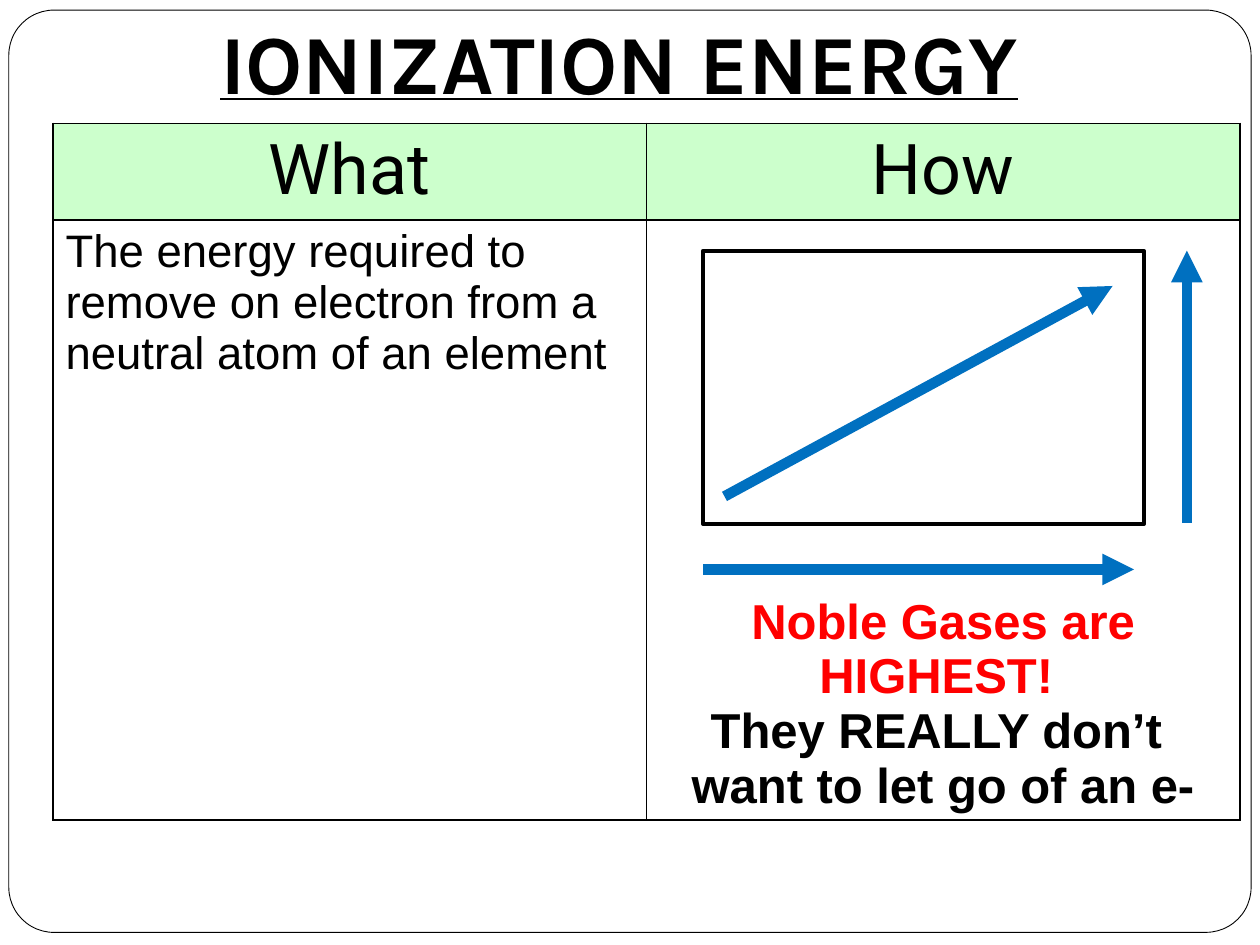
from pptx import Presentation
from pptx.dml.color import RGBColor
from pptx.enum.shapes import MSO_CONNECTOR, MSO_SHAPE
from pptx.enum.text import MSO_ANCHOR, PP_ALIGN
from pptx.oxml import parse_xml
from pptx.oxml.ns import nsdecls
from pptx.util import Inches, Pt

COLORS = {"black": "000000", "white": "FFFFFF", "header": "CCFFCC",
          "arrow": "0070C0", "highlight": "FF0000"}


def color(name):
    return RGBColor.from_string(COLORS[name])


def write(paragraph, text, size=26, font="Arial", fill="black", bold=False,
          underline=False, align=PP_ALIGN.LEFT):
    """Add text to a paragraph; each newline becomes a line break."""
    paragraph.alignment = align
    for index, line in enumerate(text.split("\n")):
        if index:
            paragraph.add_line_break()
        if line:
            run = paragraph.add_run()
            run.text = line
            run.font.size = Pt(size)
            run.font.name = font
            run.font.bold = bold
            run.font.underline = underline
            run.font.color.rgb = color(fill)


presentation = Presentation()
presentation.slide_width = Inches(10)
presentation.slide_height = Inches(7.5)
slide = presentation.slides.add_slide(presentation.slide_layouts[6])

# Rounded frame
frame = slide.shapes.add_shape(MSO_SHAPE.ROUNDED_RECTANGLE, Inches(0.07), Inches(0.08),
                               Inches(9.86), Inches(7.32))
frame.adjustments[0] = 0.049
frame.shadow.inherit = False
frame.fill.solid()
frame.fill.fore_color.rgb = color("white")
frame.line.color.rgb = color("black")
frame.line.width = Pt(0.5)

# Title
title = slide.shapes.add_textbox(Inches(0.33), Inches(0.25), Inches(9.17), Inches(0.73))
title.text_frame.word_wrap = True
title.text_frame.vertical_anchor = MSO_ANCHOR.BOTTOM
title.text_frame.margin_bottom = Inches(0.1)
write(title.text_frame.paragraphs[0], "IONIZATION ENERGY", size=48, font="Karla",
      bold=True, underline=True, align=PP_ALIGN.CENTER)

# Table
table = slide.shapes.add_table(2, 2, Inches(0.42), Inches(0.98),
                               Inches(9.42), Inches(5.51)).table
table.rows[0].height = Inches(0.75)
table.rows[1].height = Inches(4.76)
for cell, fill in zip(table.iter_cells(), ["header", "header", "white", "white"]):
    cell.fill.solid()
    cell.fill.fore_color.rgb = color(fill)
    properties = cell._tc.get_or_add_tcPr()
    for index, side in enumerate(["lnL", "lnR", "lnT", "lnB"]):
        properties.insert(index, parse_xml(
            f'<a:{side} {nsdecls("a")} w="12700"><a:solidFill>'
            f'<a:srgbClr val="{COLORS["black"]}"/></a:solidFill></a:{side}>'))

for column, heading in enumerate(["What", "How"]):
    write(table.cell(0, column).text_frame.paragraphs[0], heading, size=40,
          font="Roboto", align=PP_ALIGN.CENTER)

write(table.cell(1, 0).text_frame.paragraphs[0],
      "The energy required to remove on electron from a neutral atom of an element")

trend_cell = table.cell(1, 1)
trend_cell.vertical_anchor = MSO_ANCHOR.BOTTOM
trend_note = trend_cell.text_frame.paragraphs[0]
for text, fill in [("Noble Gases are HIGHEST! \n", "highlight"),
                   ("They REALLY don’t \nwant to let go of an e-", "black")]:
    write(trend_note, text, size=28, fill=fill, bold=True, align=PP_ALIGN.CENTER)

# Periodic table outline
outline = slide.shapes.add_shape(MSO_SHAPE.RECTANGLE, Inches(5.58), Inches(1.99),
                                 Inches(3.5), Inches(2.17))
outline.shadow.inherit = False
outline.fill.background()
outline.line.color.rgb = color("black")
outline.line.width = Pt(2.25)

# Trend arrows: across, up, diagonal
for points in [(5.58, 4.52, 9, 4.52), (9.42, 4.15, 9.42, 1.99), (5.75, 3.94, 8.83, 2.27)]:
    arrow = slide.shapes.add_connector(MSO_CONNECTOR.STRAIGHT, *map(Inches, points))
    arrow.line.color.rgb = color("arrow")
    arrow.line.width = Pt(6)
    arrow.line._get_or_add_ln().append(
        parse_xml(f'<a:tailEnd {nsdecls("a")} type="triangle"/>'))
    arrow._element.spPr.append(parse_xml(f'<a:effectLst {nsdecls("a")}/>'))

presentation.save("out.pptx")
